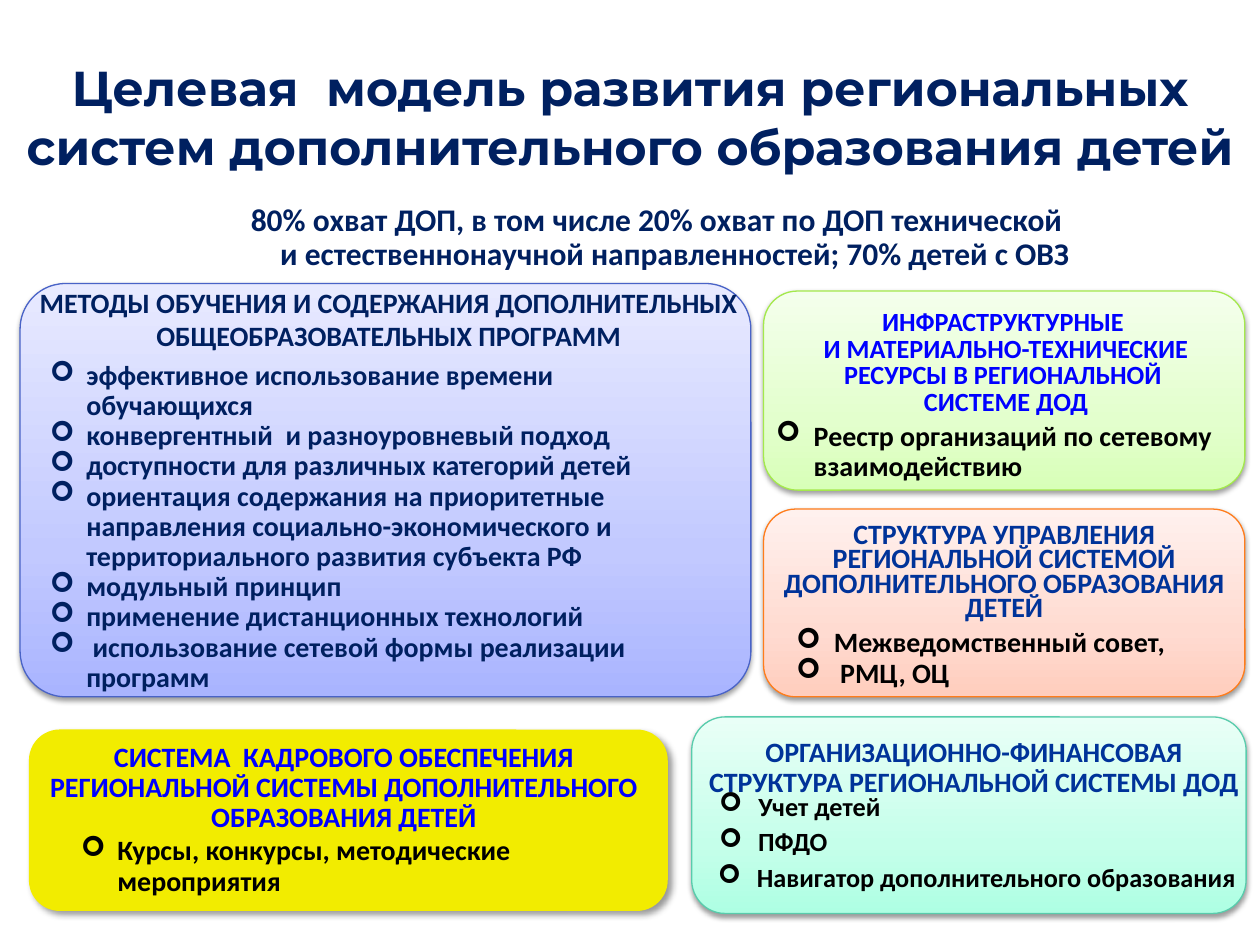
from copy import deepcopy

from lxml import etree
from pptx import Presentation
from pptx.dml.color import RGBColor
from pptx.enum.shapes import MSO_SHAPE
from pptx.enum.text import MSO_ANCHOR, MSO_AUTO_SIZE, PP_ALIGN
from pptx.oxml.ns import qn
from pptx.util import Inches, Pt

ROUND = MSO_SHAPE.ROUNDED_RECTANGLE
TOP, MIDDLE = MSO_ANCHOR.TOP, MSO_ANCHOR.MIDDLE
LEFT, CENTER, RIGHT = PP_ALIGN.LEFT, PP_ALIGN.CENTER, PP_ALIGN.RIGHT

COLORS = {
    "navy": "002060", "blue": "0000FF", "royal": "003399",
    "black": "000000", "white": "FFFFFF", "yellow": "F2EC00",
}


def write(tf, lines, size=16, color="black", font="Calibri", align=LEFT,
          spacing=0.9, indent=0, anchor=TOP, wrap=True):
    """Fill a text frame; a non-zero indent makes the lines a bulleted list."""
    tf.word_wrap = wrap
    tf.auto_size = MSO_AUTO_SIZE.NONE
    tf.vertical_anchor = anchor
    for i, line in enumerate(lines):
        p = tf.paragraphs[0] if i == 0 else tf.add_paragraph()
        p.alignment = align
        p.line_spacing = spacing
        p.space_before = p.space_after = Pt(0)
        if indent:
            pPr = p._p.get_or_add_pPr()
            pPr.set("marL", str(Inches(indent)))
            pPr.set("indent", str(-Inches(indent)))
            etree.SubElement(pPr, qn("a:buFont"), typeface="Wingdings")
            etree.SubElement(pPr, qn("a:buChar"), char="➢")
        r = p.add_run()
        r.text = line
        r.font.name = font
        r.font.size = Pt(size)
        r.font.bold = True
        r.font.color.rgb = RGBColor.from_string(COLORS[color])


def add_shadow(sp, alpha, blur, dist, angle):
    sp.shadow.inherit = False
    effects = sp._element.spPr.find(qn("a:effectLst"))
    shadow = etree.SubElement(
        effects, qn("a:outerShdw"), blurRad=str(Pt(blur)), dist=str(Pt(dist)),
        dir=str(angle * 60000), rotWithShape="0")
    clr = etree.SubElement(shadow, qn("a:srgbClr"), val=COLORS["black"])
    etree.SubElement(clr, qn("a:alpha"), val=str(alpha * 1000))


prs = Presentation()
prs.slide_width, prs.slide_height = Inches(10), Inches(7.5)
s = prs.slides.add_slide(prs.slide_layouts[5])

# Title and target figures
title = s.shapes.title
title.left, title.top = Inches(0), Inches(0.3)
title.width, title.height = Inches(10), Inches(1.25)
write(title.text_frame,
      ["Целевая  модель развития региональных систем дополнительного образования детей"],
      size=28, color="navy", font="Montserrat", align=CENTER, spacing=1.0, anchor=MIDDLE)

targets = s.shapes.add_textbox(Inches(1.25), Inches(1.57), Inches(7.34), Inches(0.65))
targets.fill.solid()
targets.fill.fore_color.rgb = RGBColor.from_string(COLORS["white"])
write(targets.text_frame,
      ["80% охват ДОП, в том числе 20% охват по ДОП технической ",
       "и естественнонаучной направленностей; 70% детей с ОВЗ"],
      size=18, color="navy", align=RIGHT)

# Panels: position, corner ratio, gradient from bottom to top, outline
panels = {}
for name, box, corner, stops, outline in [
    ("management", (6.06, 4.04, 3.82, 1.49), 0.17, ("FFCDBD", "FFDBD1", "FFF1EE"), "FF7C1B"),
    ("resources", (6.06, 2.31, 3.82, 1.58), 0.17, ("D8FFB8", "E3FFCD", "F4FFEC"), "A4E94C"),
    ("staff", (0.23, 5.79, 5.07, 1.44), 0.17, None, None),
    ("methods", (0.16, 2.25, 5.8, 3.28), 0.11, ("A9B4FF", "C2C9FF", "E8EAFF"), "4963C7"),
    ("finance", (5.49, 5.69, 4.4, 1.56), 0.17, ("AEFFE3", "C5FFEA", "E9FFF7"), "58CCAC"),
]:
    sp = s.shapes.add_shape(ROUND, *map(Inches, box))
    sp.adjustments[0] = corner
    if stops:
        sp.fill.gradient()
        sp.fill.gradient_angle = 90
        stop_list = sp._element.spPr.find(".//" + qn("a:gsLst"))
        stop_list.append(deepcopy(stop_list[0]))
        for stop, position, rgb in zip(sp.fill.gradient_stops, (0, 0.35, 1), stops):
            stop.position = position
            stop.color.rgb = RGBColor.from_string(rgb)
        sp.line.color.rgb = RGBColor.from_string(outline)
        sp.line.width = Pt(0.75)
        add_shadow(sp, 38, 3.1, 1.6, 90)
    else:
        sp.fill.solid()
        sp.fill.fore_color.rgb = RGBColor.from_string(COLORS["yellow"])
        sp.line.fill.background()
        add_shadow(sp, 40, 4, 3, 45)
    panels[name] = sp

# Lists held by the two left panels
for name, left, top, right, color, lines in [
    ("methods", 0.13, 0.51, 0.13, "navy", [
        "эффективное использование времени обучающихся",
        "конвергентный  и разноуровневый подход",
        "доступности для различных категорий детей",
        "ориентация содержания на приоритетные направления "
        "социально-экономического и территориального развития субъекта РФ",
        "модульный принцип",
        "применение дистанционных технологий",
        " использование сетевой формы реализации программ"]),
    ("staff", 0.34, 0.78, 0.34, "black", ["Курсы, конкурсы, методические мероприятия"]),
]:
    tf = panels[name].text_frame
    tf.margin_left, tf.margin_top = Inches(left), Inches(top)
    tf.margin_right, tf.margin_bottom = Inches(right), Inches(0)
    write(tf, lines, color=color, indent=0.29)

# Panel headings and the lists of the right panels
heading = {"align": CENTER}
bullets = {"indent": 0.3}
finance_item = {"indent": 0.31, "size": 15, "spacing": 1.0, "wrap": False}
for box, lines, style in [
    ((0.11, 2.21, 5.95, 0.64),
     ["МЕТОДЫ ОБУЧЕНИЯ И СОДЕРЖАНИЯ ДОПОЛНИТЕЛЬНЫХ ОБЩЕОБРАЗОВАТЕЛЬНЫХ ПРОГРАММ"],
     heading | {"color": "navy", "spacing": 1.0, "anchor": MIDDLE}),
    ((0.23, 5.85, 5, 0.83),
     ["СИСТЕМА  КАДРОВОГО ОБЕСПЕЧЕНИЯ РЕГИОНАЛЬНОЙ СИСТЕМЫ ДОПОЛНИТЕЛЬНОГО ОБРАЗОВАНИЯ ДЕТЕЙ"],
     heading | {"color": "blue"}),
    ((5.97, 2.41, 4.03, 0.96),
     ["ИНФРАСТРУКТУРНЫЕ ", "И МАТЕРИАЛЬНО-ТЕХНИЧЕСКИЕ", "РЕСУРСЫ В РЕГИОНАЛЬНОЙ ", "СИСТЕМЕ ДОД"],
     heading | {"color": "blue", "size": 15, "spacing": 0.85}),
    ((6.06, 3.3, 3.82, 0.59), ["Реестр организаций по сетевому взаимодействию"], bullets),
    ((6.06, 4.12, 3.82, 0.89),
     ["СТРУКТУРА УПРАВЛЕНИЯ РЕГИОНАЛЬНОЙ СИСТЕМОЙ ДОПОЛНИТЕЛЬНОГО ОБРАЗОВАНИЯ ДЕТЕЙ"],
     heading | {"color": "royal", "spacing": Pt(14)}),
    ((6.22, 4.94, 3.51, 0.59), ["Межведомственный совет,", " РМЦ, ОЦ"], bullets),
    ((5.49, 5.81, 4.48, 0.59),
     ["ОРГАНИЗАЦИОННО-ФИНАНСОВАЯ СТРУКТУРА РЕГИОНАЛЬНОЙ СИСТЕМЫ ДОД"],
     heading | {"color": "royal"}),
    ((5.61, 6.22, 1.59, 0.35), ["Учет детей"], finance_item),
    ((5.61, 6.5, 1.07, 0.35), ["ПФДО"], finance_item),
    ((5.6, 6.91, 4.4, 0.25), ["Навигатор дополнительного образования"],
     finance_item | {"spacing": Pt(9)}),
]:
    write(s.shapes.add_textbox(*map(Inches, box)).text_frame, lines, **style)

prs.save("out.pptx")
